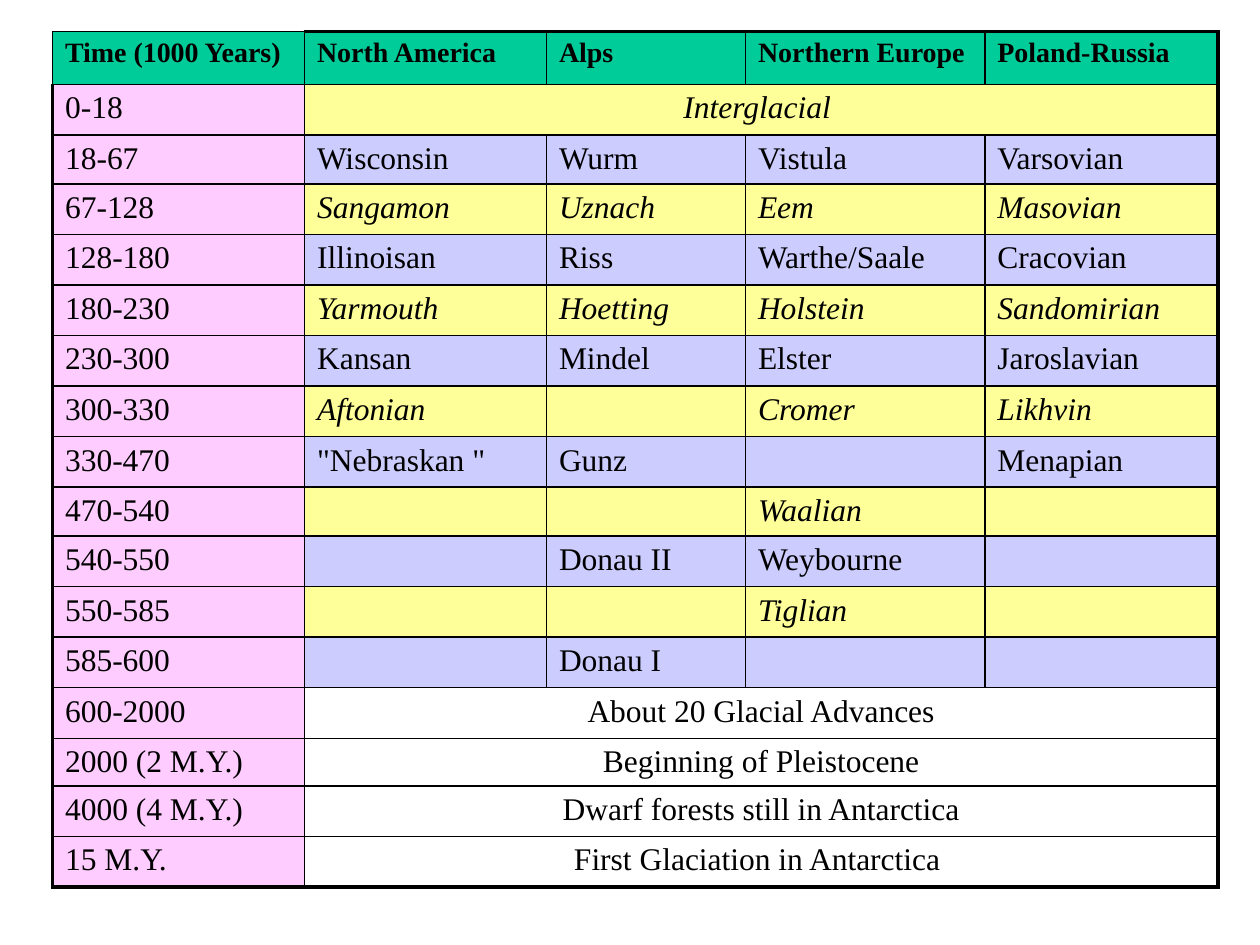
from lxml import etree
from pptx import Presentation, util as u
from pptx.dml.color import RGBColor
from pptx.enum import text
from pptx.oxml.ns import qn

Pt = u.Pt

# Content: kind of row, then its cells
HEAD = ["Time (1000 Years)", "North America", "Alps", "Northern Europe", "Poland-Russia"]
ROWS = [
    ("head", HEAD),
    ("warm", ["0-18", "Interglacial "]),
    ("cold", ["18-67", "Wisconsin", "Wurm", "Vistula", "Varsovian"]),
    ("warm", ["67-128", "Sangamon", "Uznach", "Eem", "Masovian"]),
    ("cold", ["128-180", "Illinoisan", "Riss", "Warthe/Saale", "Cracovian"]),
    ("warm", ["180-230", "Yarmouth", "Hoetting", "Holstein", "Sandomirian"]),
    ("cold", ["230-300", "Kansan", "Mindel", "Elster", "Jaroslavian"]),
    ("warm", ["300-330", "Aftonian", "", "Cromer", "Likhvin"]),
    ("cold", ["330-470", '"Nebraskan "', "Gunz", "", "Menapian"]),
    ("warm", ["470-540", "", "", "Waalian", ""]),
    ("cold", ["540-550", "", "Donau II", "Weybourne", ""]),
    ("warm", ["550-585", "", "", "Tiglian", ""]),
    ("cold", ["585-600", "", "Donau I", "", ""]),
    ("note", ["600-2000", "About 20 Glacial Advances"]),
    ("note", ["2000 (2 M.Y.)", "Beginning of Pleistocene"]),
    ("note", ["4000 (4 M.Y.)", "Dwarf forests still in Antarctica"]),
    ("note", ["15 M.Y.", "First Glaciation in Antarctica "]),
]
THEME = {
    "font": "Times New Roman", "ink": "000000", "size": 18, "head size": 16,
    "thin": 1, "thick": 2.25, "time": "FFCCFF",
    "head": "00CC99", "warm": "FFFF99", "cold": "CCCCFF", "note": None,
}

# Layout
LEFT, TOP = 30, 18
WIDTHS = [144, 138.25, 113.75, 136.8, 133.2]
TALL = 28.9
HEIGHTS = {0: 30.2, 2: 28, 9: 28, 14: 27.1}
LAST_ROW, LAST_COL = len(ROWS) - 1, len(WIDTHS) - 1


def edge(cell, side, width):
    line = etree.SubElement(cell._tc.get_or_add_tcPr(), qn("a:ln" + side), w=str(Pt(width)))
    fill = etree.SubElement(line, qn("a:solidFill"))
    etree.SubElement(fill, qn("a:srgbClr"), val=THEME["ink"])


def frame(cell, row, col, wide):
    thick = {
        "L": col == 0 and row > 0,
        "R": wide or col == LAST_COL,
        "T": row == 0 and col > 0,
        "B": row == LAST_ROW,
    }
    for side, bold in thick.items():
        edge(cell, side, THEME["thick" if bold else "thin"])


def paint(cell, tint):
    if tint:
        cell.fill.solid()
        cell.fill.fore_color.rgb = RGBColor.from_string(tint)
    else:
        cell.fill.background()


def write(cell, words, kind, col, wide):
    if not words:
        cell.margin_top = cell.margin_bottom = 0
        return
    para = cell.text_frame.paragraphs[0]
    para.alignment = text.PP_ALIGN.CENTER if wide else text.PP_ALIGN.LEFT
    run = para.add_run()
    run.text = words
    font = run.font
    font.name = THEME["font"]
    font.size = Pt(THEME["head size" if kind == "head" else "size"])
    font.bold = kind == "head"
    font.italic = kind == "warm" and col > 0
    font.color.rgb = RGBColor.from_string(THEME["ink"])


def main():
    deck = Presentation()
    deck.slide_width, deck.slide_height = Pt(720), Pt(540)
    slide = deck.slides.add_slide(deck.slide_layouts[6])

    # Table grid
    tall = [HEIGHTS.get(row, TALL) for row in range(len(ROWS))]
    table = slide.shapes.add_table(len(ROWS), len(WIDTHS), Pt(LEFT), Pt(TOP),
                                   Pt(sum(WIDTHS)), Pt(sum(tall))).table
    table.first_row = table.horz_banding = False
    for col, width in zip(table.columns, WIDTHS):
        col.width = Pt(width)
    for row, height in zip(table.rows, tall):
        row.height = Pt(height)

    # Cells; a row of two entries spans its second one to the right edge
    for row, (kind, cells) in enumerate(ROWS):
        spans = len(cells) == 2
        if spans:
            table.cell(row, 1).merge(table.cell(row, LAST_COL))
        for col in range(len(WIDTHS)):
            cell = table.cell(row, col)
            wide = spans and col == 1
            words = cells[col] if col < len(cells) else ""
            frame(cell, row, col, wide)
            paint(cell, THEME["time" if col == 0 and row > 0 else kind])
            write(cell, words, kind, col, wide)

    deck.save("out.pptx")


if __name__ == "__main__":
    main()
